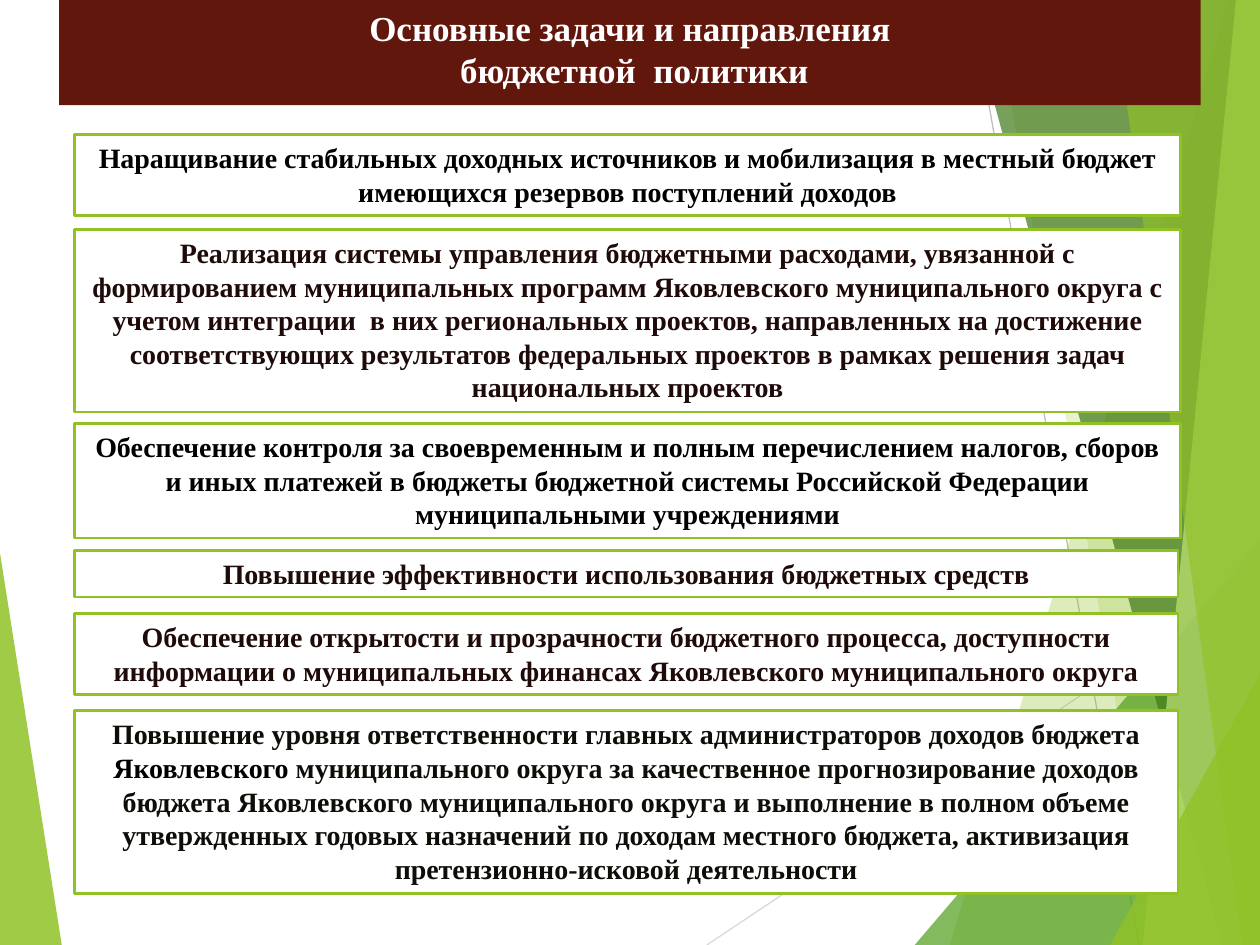
from dataclasses import dataclass

import pptx
import pptx.dml.color
import pptx.enum.shapes
import pptx.enum.text
import pptx.oxml.ns
import pptx.util
from lxml import etree

COLUMNS, ROWS = 100, 75
CELL = pptx.util.Inches(0.1)


@dataclass(frozen=True)
class Theme:
    font: str = "Times New Roman"
    title_size: int = 20
    body_size: int = 16
    border_width: float = 1.5
    hairline_width: float = 0.75
    white: str = "FFFFFF"
    black: str = "000000"
    maroon: str = "62170D"
    brown: str = "1F0A0A"
    olive: str = "0E0D08"
    lime: str = "90C226"
    pale_lime: str = "C0E474"
    green: str = "54A021"
    dark_green: str = "3F7819"
    silver: str = "D9D9D9"
    grey: str = "BFBFBF"


THEME = Theme()


def cells(*counts):
    """Turn counts of grid cells into lengths."""
    return [round(count * CELL) for count in counts]


def rgb(color):
    return pptx.dml.color.RGBColor.from_string(color)


class SlideBuilder:
    def __init__(self, presentation, theme):
        self.theme = theme
        title_only = presentation.slide_layouts[5]
        self.slide = presentation.slides.add_slide(title_only)
        self.shapes = self.slide.shapes

    def fill(self, shape, color, opacity=100):
        shape.fill.solid()
        shape.fill.fore_color.rgb = rgb(color)
        if opacity < 100:
            properties = shape._element.spPr
            color_element = properties.find(".//" + pptx.oxml.ns.qn("a:srgbClr"))
            alpha = etree.SubElement(color_element, pptx.oxml.ns.qn("a:alpha"))
            alpha.set("val", str(opacity * 1000))

    def facet(self, points, color, opacity):
        """Draw a translucent polygon through grid points."""
        start, *rest = [cells(*point) for point in points]
        builder = self.shapes.build_freeform(*start)
        builder.add_line_segments(rest, close=True)
        shape = builder.convert_to_shape()
        shape.shadow.inherit = False
        shape.line.fill.background()
        self.fill(shape, color, opacity)

    def hairline(self, start, end, color):
        connector = self.shapes.add_connector(
            pptx.enum.shapes.MSO_CONNECTOR.STRAIGHT, *cells(*start, *end))
        connector.line.color.rgb = rgb(color)
        connector.line.width = pptx.util.Pt(self.theme.hairline_width)
        properties = connector._element.spPr
        etree.SubElement(properties, pptx.oxml.ns.qn("a:effectLst"))

    def add_text(self, shape, paragraphs, size):
        """Fill a shape with centred bold paragraphs, each a list of (text, color)."""
        frame = shape.text_frame
        frame.word_wrap = True
        frame.vertical_anchor = pptx.enum.text.MSO_ANCHOR.TOP
        frame.auto_size = pptx.enum.text.MSO_AUTO_SIZE.SHAPE_TO_FIT_TEXT
        for index, runs in enumerate(paragraphs):
            paragraph = frame.add_paragraph() if index else frame.paragraphs[0]
            paragraph.alignment = pptx.enum.text.PP_ALIGN.CENTER
            for text, color in runs:
                run = paragraph.add_run()
                run.text = text
                run.font.name = self.theme.font
                run.font.size = pptx.util.Pt(size)
                run.font.bold = True
                run.font.color.rgb = rgb(color)

    def title(self, lines, left, top, width, height):
        title = self.shapes.title
        self.shapes._spTree.append(title._element)  # in front of the facets
        title.left, title.top, title.width, title.height = cells(left, top, width, height)
        self.fill(title, self.theme.maroon)
        self.add_text(title, [[(line, self.theme.white)] for line in lines],
                      self.theme.title_size)

    def task(self, top, width, line_count, runs):
        height = 1 + 2.7 * line_count
        box = self.shapes.add_shape(
            pptx.enum.shapes.MSO_SHAPE.RECTANGLE, *cells(5.9, top, width, height))
        box.shadow.inherit = False
        self.fill(box, self.theme.white)
        box.line.color.rgb = rgb(self.theme.lime)
        box.line.width = pptx.util.Pt(self.theme.border_width)
        self.add_text(box, [runs], self.theme.body_size)


LEFT_FACET = ([(0, 43.9), (4.9, ROWS), (0, ROWS)], THEME.lime, 85)
HAIRLINES = [
    ((56.1, ROWS), (COLUMNS, 45.7), THEME.silver),
    ((77, 0), (90.4, ROWS), THEME.grey),
]
# Corners along the inner edge; the slide's right edge closes each facet.
RIGHT_FACETS = [
    ((97.5, 0), (75.4, ROWS), THEME.lime, 30),
    ((78.8, 0), (91.9, ROWS), THEME.lime, 20),
    ((COLUMNS, 42.9), (72.6, ROWS), THEME.green, 72),
    ((76.7, 0), (97, ROWS), THEME.dark_green, 70),
    ((98.1, 0), (90.7, ROWS), THEME.pale_lime, 70),
    ((88.3, 0), (98.6, ROWS), THEME.lime, 65),
    ((COLUMNS, 53.5), (88.1, ROWS), THEME.lime, 80),
]

# Top row, width, number of text lines, runs
TASKS = [
    (10.7, 87.8, 2, [(
        "Наращивание стабильных доходных источников и мобилизация в местный бюджет "
        "имеющихся резервов поступлений доходов", THEME.black)]),
    (18.2, 87.8, 5, [(
        "Реализация системы управления бюджетными расходами, увязанной с "
        "формированием муниципальных программ Яковлевского муниципального округа с "
        "учетом интеграции  в них региональных проектов, направленных на достижение "
        "соответствующих результатов федеральных проектов в рамках решения задач "
        "национальных проектов", THEME.brown)]),
    (33.6, 87.8, 3, [(
        "Обеспечение контроля за своевременным и полным перечислением налогов, сборов "
        "и иных платежей в бюджеты бюджетной системы Российской Федерации "
        "муниципальными учреждениями", THEME.black)]),
    (43.7, 87.6, 1, [(
        "Повышение эффективности использования бюджетных средств", THEME.brown)]),
    (48.7, 87.6, 2, [(
        "Обеспечение открытости и прозрачности бюджетного процесса, доступности "
        "информации о муниципальных финансах Яковлевского муниципального округа",
        THEME.brown)]),
    (56.4, 87.6, 5, [
        ("Повышение уровня ответственности главных администраторов доходов бюджета ",
         THEME.olive),
        ("Яковлевского", THEME.black),
        (" муниципального округа за качественное прогнозирование доходов "
         "бюджета Яковлевского муниципального округа и выполнение в полном объеме "
         "утвержденных годовых назначений по доходам местного бюджета, активизация "
         "претензионно-исковой деятельности", THEME.olive)]),
]


def main():
    presentation = pptx.Presentation()
    presentation.slide_width, presentation.slide_height = cells(COLUMNS, ROWS)
    builder = SlideBuilder(presentation, THEME)

    builder.facet(*LEFT_FACET)
    for hairline in HAIRLINES:
        builder.hairline(*hairline)
    for upper, lower, color, opacity in RIGHT_FACETS:
        corners = [upper, lower, (COLUMNS, ROWS), (COLUMNS, upper[1])]
        builder.facet(corners, color, opacity)

    builder.title(["Основные задачи и направления", " бюджетной  политики"],
                  4.7, 0, 90.6, 7.7)
    for task in TASKS:
        builder.task(*task)
    presentation.save("out.pptx")


if __name__ == "__main__":
    main()
